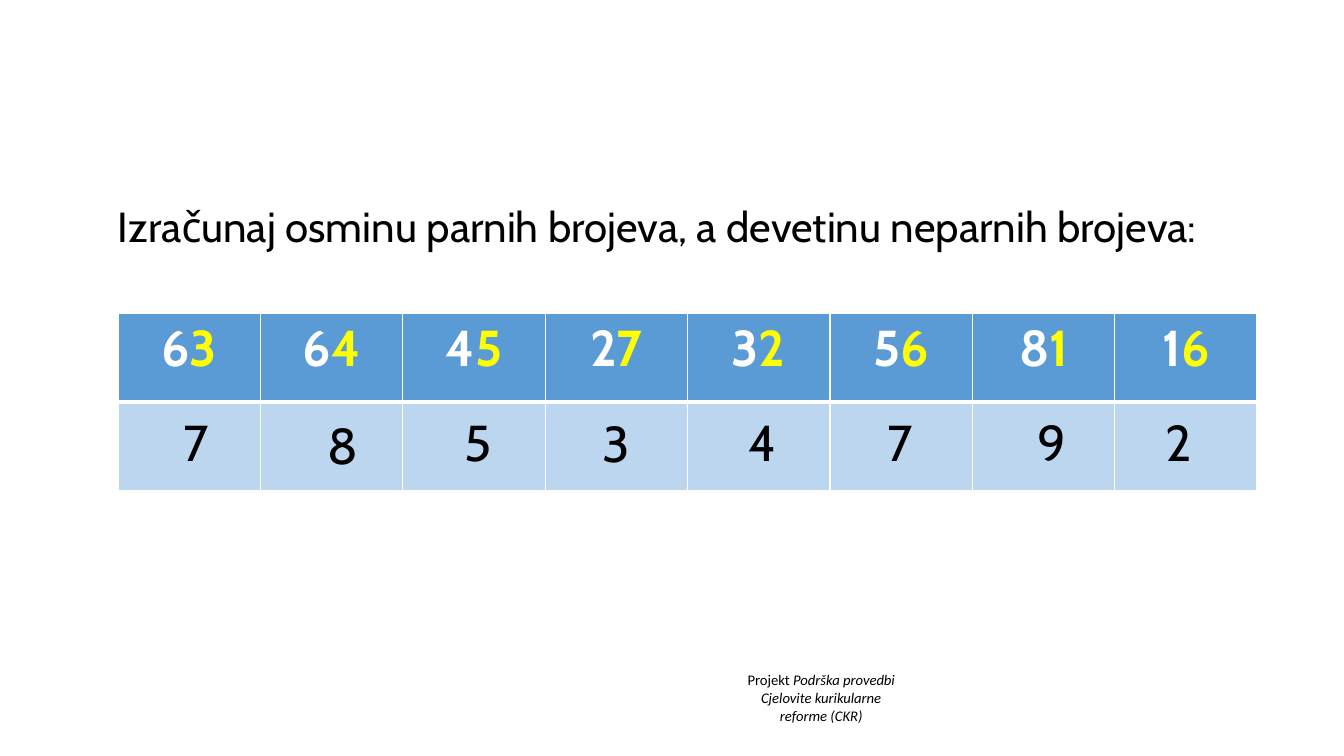
from lxml import etree
from pptx import Presentation
from pptx.dml.color import RGBColor
from pptx.enum.text import MSO_AUTO_SIZE, PP_ALIGN
from pptx.oxml.ns import qn
from pptx.util import Inches, Pt

CENTER = PP_ALIGN.CENTER
FIT_SHAPE = MSO_AUTO_SIZE.SHAPE_TO_FIT_TEXT
BLACK = RGBColor(0x00, 0x00, 0x00)
WHITE = RGBColor(0xFF, 0xFF, 0xFF)
YELLOW = RGBColor(0xFF, 0xFF, 0x00)
HEADER_BLUE = RGBColor(0x5B, 0x9B, 0xD5)
ANSWER_BLUE = RGBColor(0xBB, 0xD6, 0xEE)

NUMBERS = ["63", "64", "45", "27", "32", "56", "81", "16"]
# Each answer with its left and top edge, in inches
ANSWERS = [("7", 1.71, 3.99), ("8", 3.15, 4.02), ("5", 4.51, 3.99), ("3", 5.88, 4),
           ("4", 7.33, 3.99), ("7", 8.69, 3.99), ("9", 10.19, 3.99), ("2", 11.46, 3.99)]


def set_font(paragraph, size, name, color, bold=None):
    font = paragraph.font
    font.size = Pt(size)
    font.name = name
    font.bold = bold
    font.color.rgb = color


def place(shape, left, top, width, height):
    shape.left, shape.top = Inches(left), Inches(top)
    shape.width, shape.height = Inches(width), Inches(height)


def add_task(slide, left, top, width, height):
    task = slide.placeholders[1]
    place(task, left, top, width, height)
    sentence = task.text_frame.paragraphs[0]
    sentence.text = "Izračunaj osminu parnih brojeva, a devetinu neparnih brojeva:"
    sentence.line_spacing = 0.9
    sentence.space_before = Pt(0)
    properties = sentence._p.get_or_add_pPr()
    properties.set("marL", "0")
    properties.set("indent", "0")
    etree.SubElement(properties, qn("a:buNone"))
    set_font(sentence, 30, "Cabin", BLACK)


def set_borders(cell, **widths):
    """Draw white cell edges; widths in points are keyed L, R, T and B."""
    properties = cell._tc.get_or_add_tcPr()
    for position, (side, width) in enumerate(widths.items()):
        edge = etree.Element(qn(f"a:ln{side}"), w=str(Pt(width)))
        fill = etree.SubElement(edge, qn("a:solidFill"))
        etree.SubElement(fill, qn("a:srgbClr"), val=str(WHITE))
        properties.insert(position, edge)


def add_number_table(slide, left, top, width, height):
    table = slide.shapes.add_table(2, len(NUMBERS), Inches(left), Inches(top),
                                   Inches(width), Inches(height)).table
    for column, number in enumerate(NUMBERS):
        header, answer = table.cell(0, column), table.cell(1, column)
        for cell, color in ((header, HEADER_BLUE), (answer, ANSWER_BLUE)):
            cell.fill.solid()
            cell.fill.fore_color.rgb = color
            cell.margin_left = cell.margin_right = Inches(0.07)
            cell.margin_top = cell.margin_bottom = 0
        set_borders(header, L=1, R=1, T=1, B=3)
        set_borders(answer, L=1, R=1, T=3, B=1)

        paragraph = header.text_frame.paragraphs[0]
        paragraph.alignment = CENTER
        paragraph.line_spacing = 1.07
        set_font(paragraph, 36, "Cabin", WHITE, bold=True)
        for digit, color in zip(number, (WHITE, YELLOW)):
            run = paragraph.add_run()
            run.text = digit
            run.font.color.rgb = color


def add_text_frame(slide, left, top, width, height):
    frame = slide.shapes.add_textbox(Inches(left), Inches(top),
                                     Inches(width), Inches(height)).text_frame
    frame.word_wrap = True
    frame.auto_size = FIT_SHAPE
    return frame


def add_answers(slide, width, height):
    for digit, left, top in ANSWERS:
        answer = add_text_frame(slide, left, top, width, height).paragraphs[0]
        answer.text = digit
        answer.alignment = CENTER
        answer.line_spacing = 1.07
        set_font(answer, 36, "Cabin", BLACK)


def add_project_note(slide, left, top, width, height):
    frame = add_text_frame(slide, left, top, width, height)
    first, second = frame.paragraphs[0], frame.add_paragraph()
    first.add_run().text = "Projekt "
    programme = first.add_run()
    programme.text = "Podrška provedbi"
    programme.font.italic = True
    second.add_run().text = "Cjelovite kurikularne"
    second.add_line_break()
    second.add_run().text = "reforme (CKR)"
    for paragraph in (first, second):
        paragraph.alignment = CENTER
        set_font(paragraph, 10.5, "Calibri", BLACK)
    second.font.italic = True


def main():
    presentation = Presentation()
    presentation.slide_width = Inches(13.33)
    presentation.slide_height = Inches(7.5)
    slide = presentation.slides.add_slide(presentation.slide_layouts[1])
    empty_title = slide.shapes.title.element
    empty_title.getparent().remove(empty_title)

    add_project_note(slide, 6.99, 6.61, 2.31, 0.63)
    add_task(slide, 1.07, 2, 11.84, 4.47)
    add_number_table(slide, 1.17, 3.11, 11.3, 1.76)
    add_answers(slide, 0.47, 0.7)
    presentation.save("out.pptx")


if __name__ == "__main__":
    main()
